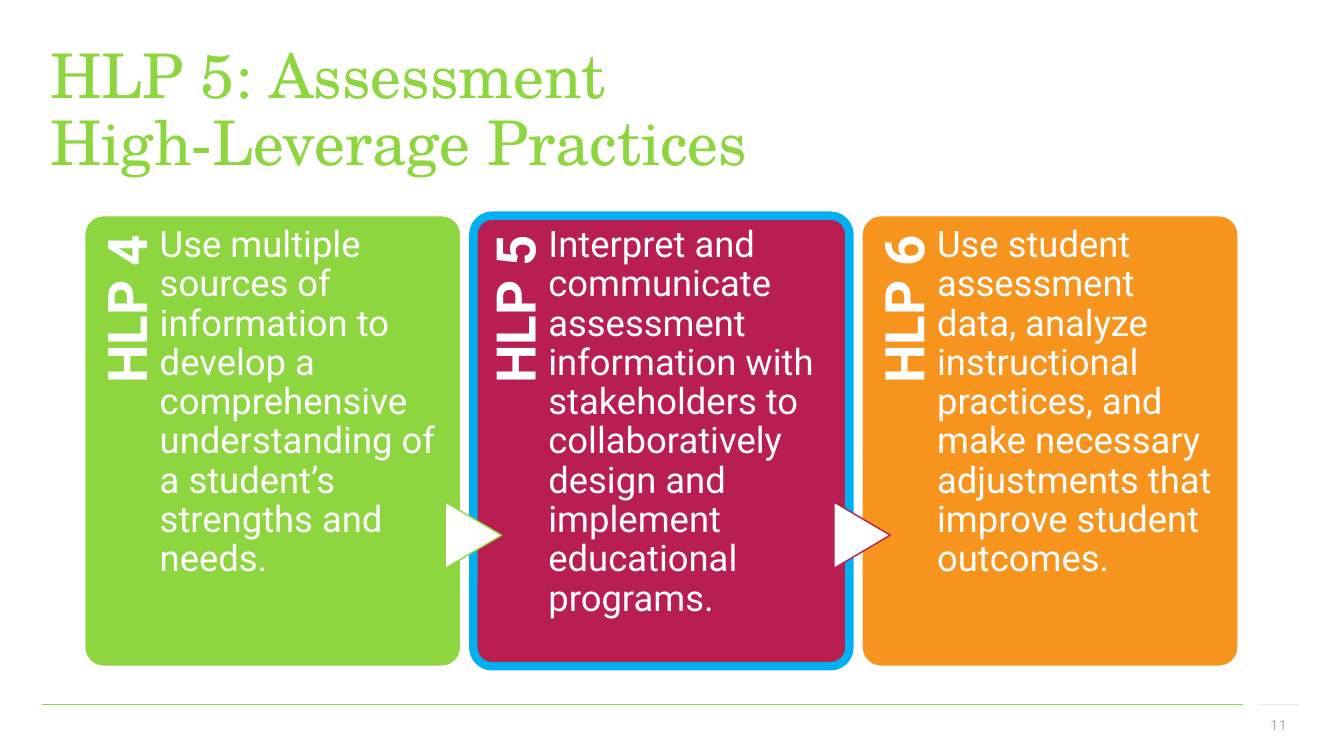
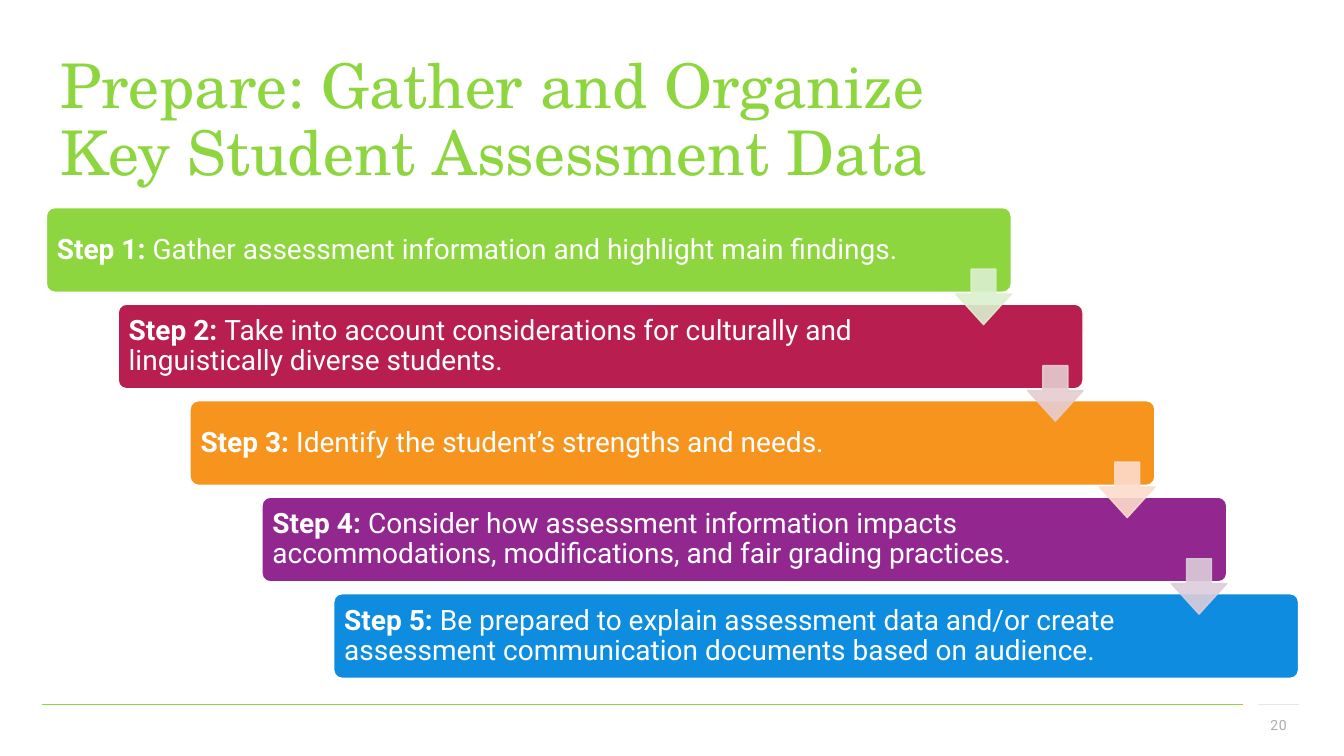
from lxml import etree
from pptx import Presentation
from pptx.dml.color import RGBColor
from pptx.enum.shapes import MSO_CONNECTOR, MSO_SHAPE
from pptx.enum.text import MSO_ANCHOR, PP_ALIGN
from pptx.oxml.ns import qn
from pptx.util import Inches, Pt

WHITE = RGBColor(0xFF, 0xFF, 0xFF)
GREEN = RGBColor(0x8E, 0xD6, 0x3F)
CRIMSON = RGBColor(0xB8, 0x1E, 0x50)
ORANGE = RGBColor(0xF7, 0x94, 0x1D)
PURPLE = RGBColor(0x92, 0x27, 0x8F)
BLUE = RGBColor(0x0E, 0x8C, 0xE0)
SKY = RGBColor(0x00, 0xB0, 0xF0)
PALE_GRAY = RGBColor(0xE7, 0xE6, 0xE6)
GRAY = RGBColor(0xAF, 0xAB, 0xAB)
PALE_GREEN = RGBColor(0xDB, 0xF0, 0xCF)
PALE_CRIMSON = RGBColor(0xE6, 0xCD, 0xD0)
PALE_ORANGE = RGBColor(0xFC, 0xDC, 0xCD)
PALE_PURPLE = RGBColor(0xDC, 0xCD, 0xDB)

LEFT, RIGHT = PP_ALIGN.LEFT, PP_ALIGN.RIGHT
TOP, MIDDLE = MSO_ANCHOR.TOP, MSO_ANCHOR.MIDDLE
ROUNDED = MSO_SHAPE.ROUNDED_RECTANGLE
TRIANGLE = MSO_SHAPE.FLOWCHART_EXTRACT
DOWN_ARROW = MSO_SHAPE.DOWN_ARROW
STRAIGHT = MSO_CONNECTOR.STRAIGHT

TITLE_FONT = "TeX Gyre Schola"
BODY_FONT = "Roboto"
DEFAULT_INSETS = (0.1, 0.05, 0.1, 0.05)


def write(para, text, size=20, color=WHITE, font=BODY_FONT, bold=False, spacing=None):
    span = para.add_run()
    span.text = text
    span.font.name = font
    span.font.size = Pt(size)
    span.font.bold = bold
    span.font.color.rgb = color
    if spacing is not None:
        span._r.get_or_add_rPr().set("spc", str(spacing))


class Deck:
    def __init__(self):
        self.file = Presentation()
        self.file.slide_width = Inches(13.33)
        self.file.slide_height = Inches(7.5)
        self.page = None

    def add_page(self, title_lines, number, title_at):
        self.page = self.file.slides.add_slide(self.file.slide_layouts[6])
        self.rule(0.42, 12.33, GREEN)
        self.rule(12.48, 12.88, PALE_GRAY)
        title = self.paragraph(self.text_box(*title_at))
        for index, line in enumerate(title_lines):
            if index:
                title.add_line_break()
            write(title, line, size=44, color=GREEN, font=TITLE_FONT)
        footer = self.paragraph(self.text_box(12.44, 6.99, 0.42, 0.4),
                                anchor=MIDDLE, align=RIGHT, line_spacing=1)
        write(footer, str(number), size=10, color=GRAY, spacing=50)

    def rule(self, start, end, color, top=6.99):
        line = self.page.shapes.add_connector(
            STRAIGHT, Inches(start), Inches(top), Inches(end), Inches(top))
        line.line.color.rgb = color
        line.line.width = Pt(1)
        etree.SubElement(line._element.spPr, qn("a:effectLst"))

    def text_box(self, left, top, width, height):
        return self.page.shapes.add_textbox(
            Inches(left), Inches(top), Inches(width), Inches(height))

    def paragraph(self, box, insets=DEFAULT_INSETS, anchor=TOP, align=LEFT,
                  line_spacing=0.9):
        frame = box.text_frame
        frame.word_wrap = True
        frame.vertical_anchor = anchor
        (frame.margin_left, frame.margin_top,
         frame.margin_right, frame.margin_bottom) = map(Inches, insets)
        para = frame.paragraphs[0]
        para.alignment = align
        para.line_spacing = line_spacing
        return para

    def shape(self, kind, left, top, width, height, fill, line=WHITE,
              line_width=1, adjustments=(), rotation=0, opacity=None):
        shape = self.page.shapes.add_shape(
            kind, Inches(left), Inches(top), Inches(width), Inches(height))
        shape.shadow.inherit = False
        shape.fill.solid()
        shape.fill.fore_color.rgb = fill
        shape.line.color.rgb = line
        shape.line.width = Pt(line_width)
        shape.rotation = rotation
        for index, value in enumerate(adjustments):
            shape.adjustments[index] = value
        if opacity is not None:
            for color in shape._element.spPr.iter(qn("a:srgbClr")):
                etree.SubElement(color, qn("a:alpha"), val=str(opacity * 1000))
        return shape

    def card(self, left, label, text, fill, border, border_width):
        top, width, height = 2.14, 3.73, 4.47
        card = self.shape(ROUNDED, left, top, width, height, fill, border,
                          border_width, adjustments=[0.05])
        write(self.paragraph(card, insets=(0.69, 0.05, 0.15, 0)), text, size=26)
        length, depth = 3.66, 0.75
        box = self.text_box(left + (depth - length) / 2, 3.6, length, depth)
        box.rotation = 270
        para = self.paragraph(box, insets=(0, 0.15, 0.19, 0), align=RIGHT)
        write(para, label, size=39, bold=True)

    def pointer(self, center, color):
        width, height = 0.66, 0.56
        self.shape(TRIANGLE, center - width / 2, 5.03, width, height, WHITE,
                   color, rotation=90)

    def step_bar(self, left, top, label, text, fill):
        bar = self.shape(ROUNDED, left, top, 9.57, 0.84, fill, adjustments=[0.1])
        para = self.paragraph(bar, insets=(0.08, 0.08, 1.05, 0.08), anchor=MIDDLE)
        write(para, label, bold=True)
        write(para, text)

    def step_arrow(self, left, top, color):
        self.shape(DOWN_ARROW, left, top, 0.55, 0.55, color, color,
                   adjustments=[0.45, 0.55], opacity=90)


def build_practices(deck):
    deck.add_page(["HLP 5: Assessment", "High-Leverage Practices"], 11,
                  title_at=(0.4, 0.4, 12.5, 1.35))
    practices = [
        ("HLP 4", "Use multiple sources of information to develop a comprehensive "
         "understanding of a student’s strengths and needs.", GREEN, WHITE, 1),
        ("HLP 5", "Interpret and communicate assessment information with stakeholders "
         "to collaboratively design and implement educational programs.",
         CRIMSON, SKY, 6),
        ("HLP 6", "Use student assessment data, analyze instructional practices, and "
         "make necessary adjustments that improve student outcomes.",
         ORANGE, WHITE, 1),
    ]
    previous_fill = None
    for index, (label, text, fill, border, border_width) in enumerate(practices):
        left = 0.84 + index * 7.71 / 2
        deck.card(left, label, text, fill, border, border_width)
        if previous_fill is not None:
            deck.pointer(left, previous_fill)
        previous_fill = fill


def build_steps(deck):
    deck.add_page(["Prepare: Gather and Organize", "Key Student Assessment Data"], 20,
                  title_at=(0.5, 0.5, 12.25, 1.45))
    steps = [
        ("Gather assessment information and highlight main findings.", GREEN),
        ("Take into account considerations for culturally and linguistically "
         "diverse students.", CRIMSON),
        ("Identify the student’s strengths and needs.", ORANGE),
        ("Consider how assessment information impacts accommodations, modifications, "
         "and fair grading practices.", PURPLE),
        ("Be prepared to explain assessment data and/or create assessment "
         "communication documents based on audience.", BLUE),
    ]
    arrow_colors = [PALE_GREEN, PALE_CRIMSON, PALE_ORANGE, PALE_PURPLE]
    corners = [(0.46 + index * 2.85 / 4, 2.06 + index * 3.83 / 4)
               for index in range(len(steps))]
    for number, ((left, top), (text, fill)) in enumerate(zip(corners, steps), 1):
        deck.step_bar(left, top, f"Step {number}: ", text, fill)
    for (left, top), color in zip(corners, arrow_colors):
        deck.step_arrow(left + 9.02, top + 0.61, color)


def main():
    deck = Deck()
    build_practices(deck)
    build_steps(deck)
    deck.file.save("out.pptx")


if __name__ == "__main__":
    main()
